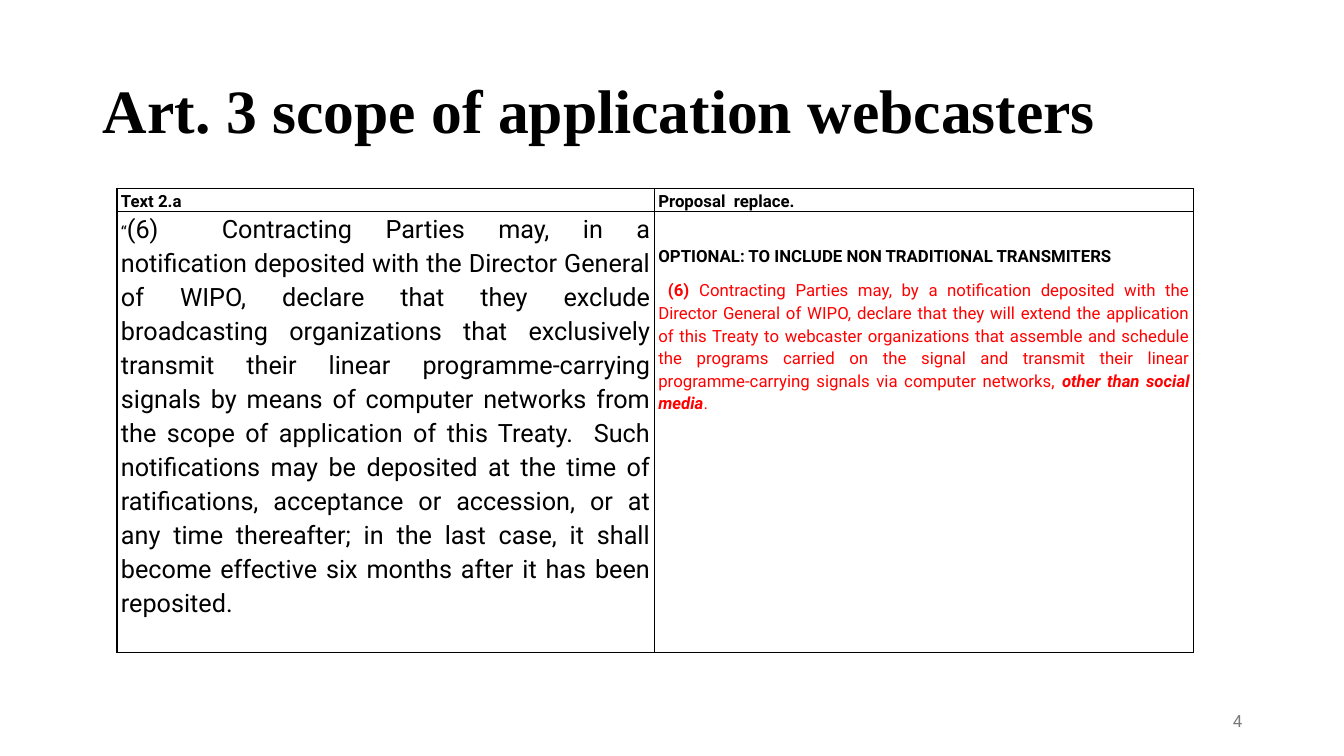
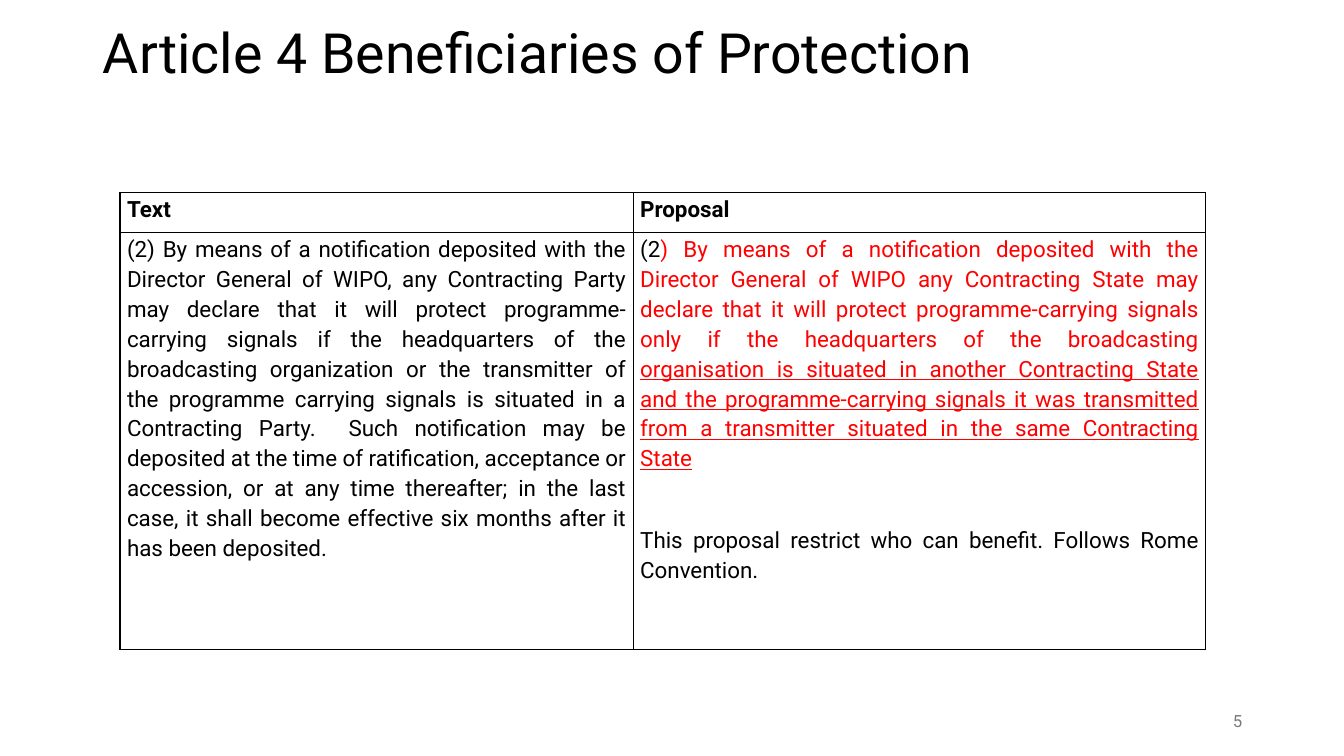
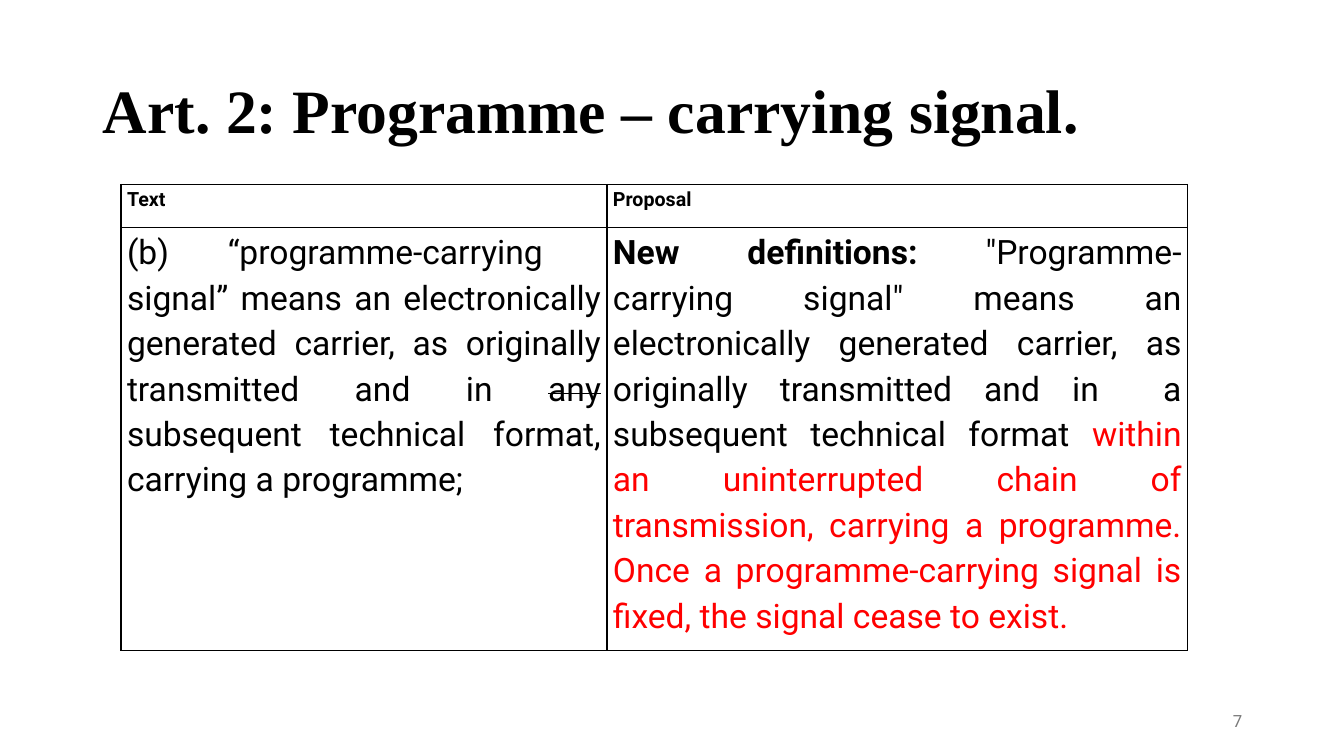
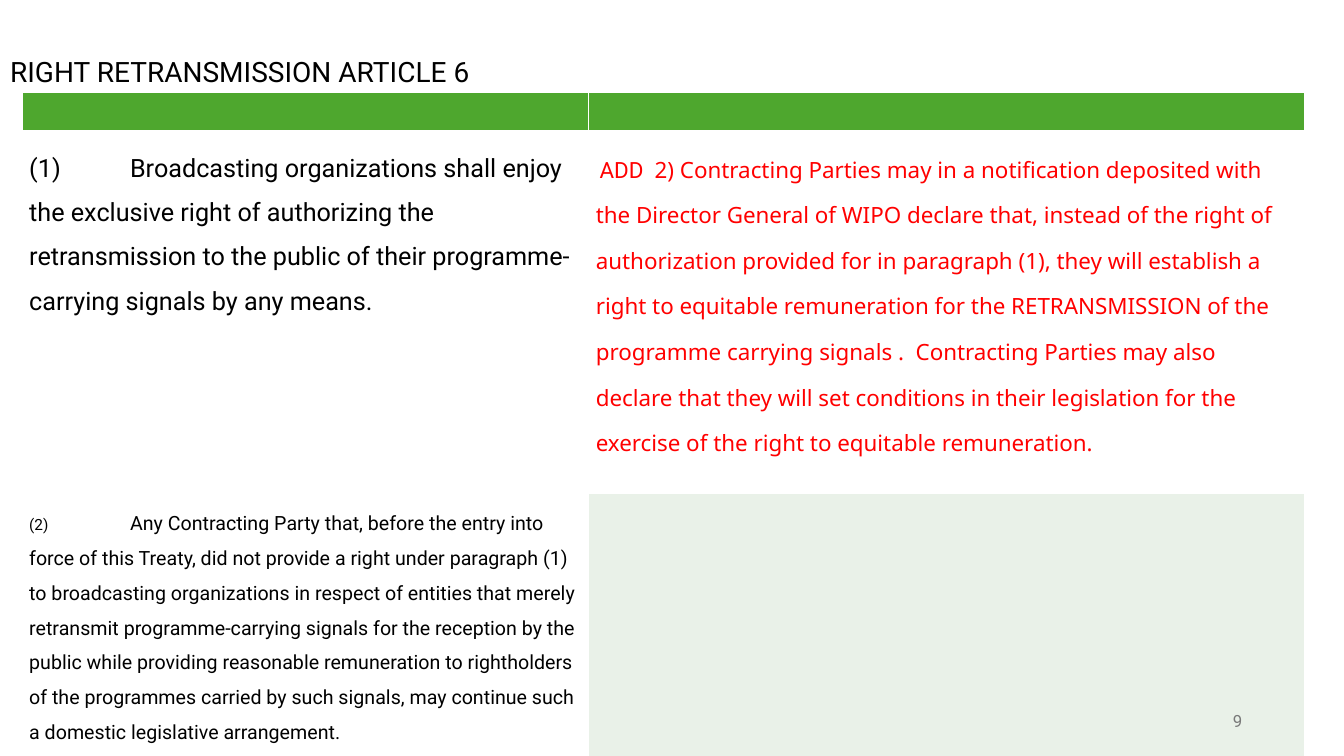
from dataclasses import dataclass, field

from lxml import etree
from pptx import Presentation
from pptx.dml.color import RGBColor
from pptx.enum import text
from pptx.oxml import ns
from pptx.util import Inches, Pt

BLACK = RGBColor(0x00, 0x00, 0x00)
WHITE = RGBColor(0xFF, 0xFF, 0xFF)
RED = RGBColor(0xFF, 0x00, 0x00)
GREY = RGBColor(0x79, 0x79, 0x79)
GREEN = RGBColor(0x4E, 0xA7, 0x2E)
PALE_GREEN = RGBColor(0xE9, 0xF1, 0xE8)

BODY_FONT = "Roboto"
TITLE_FONT = "Times New Roman"
PROPOSAL_FONT = "Noto Sans"

TITLE_BOX = (0.92, 0.4, 11.5, 1.45)
NUMBER_BOX = (9.42, 6.95, 3, 0.4)
JUSTIFIED = text.PP_ALIGN.JUSTIFY


@dataclass
class Run:
    text: str
    size: float = None
    color: RGBColor = None
    name: str = None
    bold: bool = None
    italic: bool = None
    underline: bool = None
    strike: bool = False


@dataclass
class Block:
    runs: list
    size: float
    bold: bool = False
    color: RGBColor = BLACK
    align: text.PP_ALIGN = text.PP_ALIGN.LEFT
    spacing: float = 1.15
    after: float = 8


@dataclass
class Cell:
    blocks: list = field(default_factory=list)
    fill: RGBColor = None
    top: float = None
    bottom_border: float = 1


def inches(box):
    return [Inches(length) for length in box]


def set_font(font, size, color, name=BODY_FONT, bold=False):
    font.size = Pt(size)
    font.color.rgb = color
    font.name = name
    font.bold = bold


def add_run(paragraph, source):
    run = paragraph.add_run()
    run.text = source.text
    font = run.font
    if source.size:
        font.size = Pt(source.size)
    if source.color is not None:
        font.color.rgb = source.color
    if source.name:
        font.name = source.name
    font.bold = source.bold
    font.italic = source.italic
    font.underline = source.underline
    if source.strike:
        run._r.get_or_add_rPr().set("strike", "sngStrike")


def add_tab_stop(paragraph, position):
    properties = paragraph._p.get_or_add_pPr()
    stops = etree.SubElement(properties, ns.qn("a:tabLst"))
    etree.SubElement(stops, ns.qn("a:tab"), pos=str(Inches(position)), algn="l")


def write_block(paragraph, block):
    paragraph.alignment = block.align
    paragraph.line_spacing = block.spacing
    paragraph.space_after = Pt(block.after)
    if any("\t" in run.text for run in block.runs):
        add_tab_stop(paragraph, 1)
    set_font(paragraph.font, block.size, block.color, bold=block.bold)
    for run in block.runs:
        add_run(paragraph, run)


def set_borders(table_cell, color, bottom_width):
    properties = table_cell._tc.get_or_add_tcPr()
    for index, side in enumerate(("lnL", "lnR", "lnT", "lnB")):
        width = bottom_width if side == "lnB" else 1
        line = etree.Element(ns.qn("a:" + side), w=str(Pt(width)))
        fill = etree.SubElement(line, ns.qn("a:solidFill"))
        etree.SubElement(fill, ns.qn("a:srgbClr"), val=str(color))
        properties.insert(index, line)


def fill_cell(table_cell, cell, insets, border):
    horizontal, vertical = insets
    table_cell.margin_left = table_cell.margin_right = Inches(horizontal)
    table_cell.margin_bottom = Inches(vertical)
    table_cell.margin_top = Inches(vertical if cell.top is None else cell.top)
    if cell.fill is None:
        table_cell.fill.background()
    else:
        table_cell.fill.solid()
        table_cell.fill.fore_color.rgb = cell.fill
    set_borders(table_cell, border, cell.bottom_border)
    frame = table_cell.text_frame
    for index, block in enumerate(cell.blocks):
        write_block(frame.add_paragraph() if index else frame.paragraphs[0], block)


def add_comparison(slide, left, top, widths, heights, rows, insets, border=BLACK):
    box = inches((left, top, sum(widths), sum(heights)))
    table = slide.shapes.add_table(len(rows), len(widths), *box).table
    table.first_row = table.horz_banding = False
    for column, width in zip(table.columns, widths):
        column.width = Inches(width)
    for row, height, cells in zip(table.rows, heights, rows):
        row.height = Inches(height)
        for table_cell, cell in zip(row.cells, cells):
            fill_cell(table_cell, cell, insets, border)


def heading_row(size, *labels):
    return [Cell([Block([Run(label)], size, bold=True)]) for label in labels]


def set_title(slide, title, box=TITLE_BOX, size=44, name=TITLE_FONT, bold=True):
    shape = slide.shapes.title
    shape.left, shape.top, shape.width, shape.height = inches(box)
    frame = shape.text_frame
    frame.text = title
    frame.word_wrap = True
    frame.auto_size = text.MSO_AUTO_SIZE.NONE
    frame.vertical_anchor = text.MSO_ANCHOR.MIDDLE
    paragraph = frame.paragraphs[0]
    paragraph.alignment = text.PP_ALIGN.LEFT
    paragraph.line_spacing = 0.9
    set_font(paragraph.font, size, BLACK, name, bold)


def add_slide_number(slide, number):
    frame = slide.shapes.add_textbox(*inches(NUMBER_BOX)).text_frame
    frame.word_wrap = True
    frame.vertical_anchor = text.MSO_ANCHOR.MIDDLE
    paragraph = frame.paragraphs[0]
    paragraph.text = str(number)
    paragraph.alignment = text.PP_ALIGN.RIGHT
    set_font(paragraph.font, 12, GREY)


def build_webcasters(slide):
    set_title(slide, "Art. 3 scope of application webcasters")
    current = Cell([Block([
        Run("“", size=12),
        Run("(6)\tContracting Parties may, in a notification deposited with the Director General of WIPO, "
            "declare that they exclude broadcasting organizations that exclusively transmit their linear "
            "programme-carrying signals by means of computer networks from the scope of application of this "
            "Treaty.  Such notifications may be deposited at the time of ratifications, acceptance or "
            "accession, or at any time thereafter; in the last case, it shall become effective six months "
            "after it has been reposited."),
    ], 18, align=JUSTIFIED)])
    proposal = Cell([
        Block([Run("OPTIONAL: TO INCLUDE NON TRADITIONAL TRANSMITERS")], 12, bold=True, align=JUSTIFIED),
        Block([
            Run(" (6) ", bold=True),
            Run("Contracting Parties may, by a notification deposited with the Director General of WIPO, "
                "declare that they will extend the application of this Treaty to webcaster organizations "
                "that assemble and schedule the programs carried on the signal and transmit their linear "
                "programme-carrying signals via computer networks, "),
            Run("other than social media", bold=True, italic=True),
            Run("."),
        ], 12, color=RED, align=JUSTIFIED),
    ], top=0.33)
    rows = [heading_row(12, "Text 2.a", "Proposal  replace."), [current, proposal]]
    add_comparison(slide, 1.16, 1.87, (5.33, 5.35), (0.22, 4.38), rows, (0.04, 0))


def build_beneficiaries(slide):
    set_title(slide, "Article 4 Beneficiaries of Protection", (0.92, 0.05, 11.5, 1.01), 39.6, BODY_FONT, False)
    current = Cell([Block([
        Run("(2) By means of a notification deposited with the Director General of WIPO, any Contracting "
            "Party may declare that it will protect programme-carrying signals if the headquarters of the "
            "broadcasting organization or the transmitter of the programme carrying signals is situated in "
            "a Contracting Party.  Such notification may be deposited at the time of ratification, "
            "acceptance or accession, or at any time thereafter; in the last case, it shall become "
            "effective six months after it has been deposited."),
    ], 16, align=JUSTIFIED)])
    proposal = Cell([
        Block([
            Run("(2", color=BLACK),
            Run(") By means of a notification deposited with the Director General of WIPO any Contracting "
                "State may declare that it will protect programme-carrying signals only if the "
                "headquarters of the broadcasting "),
            Run("organisation is situated in another Contracting State and the programme-carrying signals "
                "it was transmitted from a transmitter situated in the same Contracting State",
                underline=True),
        ], 16, color=RED, align=JUSTIFIED, after=37),
        Block([Run("This proposal restrict who can benefit. Follows Rome Convention.")], 16, align=JUSTIFIED),
    ])
    rows = [heading_row(16, "Text", "Proposal"), [current, proposal]]
    add_comparison(slide, 1.19, 1.91, (5.09, 5.68), (0.4, 4.13), rows, (0.07, 0))


def build_signal(slide):
    set_title(slide, "Art. 2: Programme – carrying signal.")
    current = Cell([Block([
        Run("(b)\t“programme-carrying signal” means an electronically generated carrier, as originally "
            "transmitted and in "),
        Run("any", strike=True),
        Run(" subsequent technical format, carrying a programme;"),
    ], 24, align=JUSTIFIED)])
    proposal = Cell([Block([
        Run("New definitions: ", bold=True),
        Run("\"Programme-carrying signal\" means an electronically generated carrier, as originally "
            "transmitted and in  a subsequent technical format "),
        Run("within an uninterrupted chain of transmission, carrying a programme. Once a "
            "programme-carrying signal is fixed, the signal cease to exist.", color=RED),
    ], 24, align=JUSTIFIED)])
    rows = [heading_row(14, "Text", "Proposal"), [current, proposal]]
    add_comparison(slide, 1.2, 1.83, (4.82, 5.76), (0.43, 4.19), rows, (0.06, 0))


def build_retransmission(slide):
    set_title(slide, "RIGHT RETRANSMISSION ARTICLE 6", (0, 0, 11.5, 1.45), 20, BODY_FONT, False)
    exclusive_right = Cell([Block([
        Run("(1)\tBroadcasting organizations shall enjoy the exclusive right of authorizing the "
            "retransmission to the public of their programme-carrying signals by any means."),
    ], 18, spacing=1.5, after=0)])
    remuneration = Cell([Block([
        Run(" ", size=11),
        Run("ADD  "),
        Run("2) Contracting Parties may in a notification deposited with the Director General of WIPO "
            "declare that, instead of the right of authorization provided for in paragraph (1), they will "
            "establish a right to equitable remuneration for the RETRANSMISSION of the programme carrying "
            "signals .  Contracting Parties may also declare that they will set conditions in their "
            "legislation for the exercise of the right to equitable remuneration.", name=PROPOSAL_FONT),
    ], 16, color=RED, spacing=1.5, after=0)])
    existing_law = Cell([Block([
        Run("(2)\t", size=11),
        Run("Any Contracting Party that, before the entry into force of this Treaty, did not provide a "
            "right under paragraph (1) to broadcasting organizations in respect of entities that merely "
            "retransmit programme-carrying signals for the reception by the public while providing "
            "reasonable remuneration to rightholders of the programmes carried by such signals, may "
            "continue such a domestic legislative arrangement."),
    ], 14, spacing=1.5, after=0)])
    rows = [
        [Cell(fill=GREEN, top=0, bottom_border=3) for _ in range(2)],
        [exclusive_right, remuneration],
        [existing_law, Cell(fill=PALE_GREEN)],
    ]
    add_comparison(slide, 0.22, 0.92, (5.62, 7.1), (0.39, 3.59, 2.63), rows, (0.07, 0.07), WHITE)


def main():
    presentation = Presentation()
    presentation.slide_width = Inches(13.33)
    presentation.slide_height = Inches(7.5)
    title_only = presentation.slide_layouts[5]
    builders = {4: build_webcasters, 5: build_beneficiaries, 7: build_signal, 9: build_retransmission}
    for number, build in builders.items():
        slide = presentation.slides.add_slide(title_only)
        build(slide)
        add_slide_number(slide, number)
    presentation.save("out.pptx")


if __name__ == "__main__":
    main()
